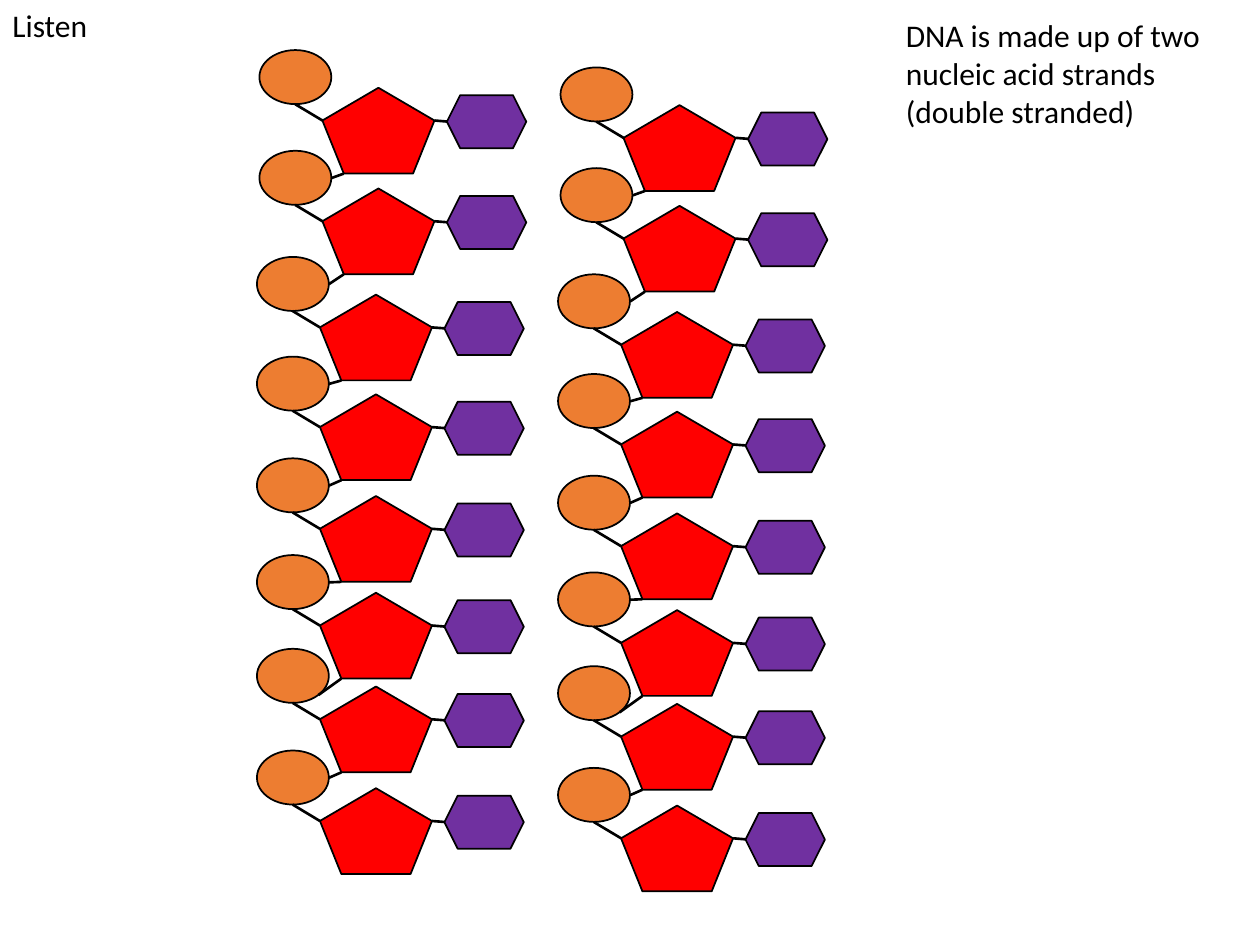
from lxml import etree
from pptx import Presentation
from pptx import util as u
from pptx.dml.color import RGBColor
from pptx.enum import shapes, text
from pptx.oxml.ns import qn

PHOSPHATE_SIZE = (1.45, 1.09)
SUGAR_SIZE = (2.26, 1.73)
BASE_SIZE = (1.6, 1.07)

# Places within a nucleotide, measured from the corner of its phosphate
SUGAR_AT = (1.27, 0.76)
BASE_AT = (3.78, 0.91)
SUGAR_FOOT = (1.7, 2.49)
PHOSPHATE_SIDE = (1.45, 0.55)
PHOSPHATE_LOWER_SIDE = (1.24, 0.93)
BONDS = [((0.72, 1.09), (1.27, 1.42)), ((3.53, 1.42), (3.78, 1.44))]

NUCLEOTIDES = [
    (5.23, 1.01), (5.23, 3.04), (5.18, 5.18), (5.18, 7.19),
    (5.18, 9.24), (5.18, 11.19), (5.18, 13.08), (5.18, 15.13),
]
LOW_LINK = 6  # the nucleotide whose link meets the phosphate lower down
STRAND_OFFSETS = [(0, 0), (6.07, 0.35)]


def colour(value):
    return RGBColor.from_string(value)


def add(point, offset):
    return point[0] + offset[0], point[1] + offset[1]


def write(frame, words, size=18, font="Calibri", ink="000000"):
    run = frame.paragraphs[0].add_run()
    run.text = words
    run.font.size = u.Pt(size)
    run.font.name = font
    run.font.color.rgb = colour(ink)


class Diagram:
    """Holds the style and the slide being drawn."""

    ink = "000000"
    phosphate = "ED7D31"
    sugar = "FF0000"
    base = "7030A0"

    def __init__(self, slide):
        self.slide = slide

    def shape(self, group, kind, at, size, fill):
        shape = group.shapes.add_shape(kind, *map(u.Cm, at + size))
        shape.shadow.inherit = False
        shape.fill.solid()
        shape.fill.fore_color.rgb = colour(fill)
        shape.line.color.rgb = colour(self.ink)
        shape.line.width = u.Pt(1)

    def bond(self, group, start, end):
        line = group.shapes.add_connector(
            shapes.MSO_CONNECTOR.STRAIGHT, *map(u.Cm, start + end))
        line.line.color.rgb = colour(self.ink)
        line.line.width = u.Pt(1.5)
        etree.SubElement(line._element.spPr, qn("a:effectLst"))

    def nucleotide(self, group, at):
        kinds = shapes.MSO_SHAPE
        self.shape(group, kinds.OVAL, at, PHOSPHATE_SIZE, self.phosphate)
        self.shape(group, kinds.REGULAR_PENTAGON, add(at, SUGAR_AT),
                   SUGAR_SIZE, self.sugar)
        self.shape(group, kinds.HEXAGON, add(at, BASE_AT),
                   BASE_SIZE, self.base)
        for start, end in BONDS:
            self.bond(group, add(at, start), add(at, end))

    def strand(self, offset):
        """Draw the nucleotides from the bottom up, then link neighbours."""
        group = self.slide.shapes.add_group_shape()
        places = [add(place, offset) for place in NUCLEOTIDES]
        for place in reversed(places):
            self.nucleotide(group, place)
        for index in range(len(places) - 1, 0, -1):
            side = PHOSPHATE_LOWER_SIDE if index == LOW_LINK else PHOSPHATE_SIDE
            self.bond(group, add(places[index], side),
                      add(places[index - 1], SUGAR_FOOT))

    def label(self, words, at, size):
        box = self.slide.shapes.add_textbox(*map(u.Cm, at + size))
        box.text_frame.word_wrap = True
        box.text_frame.auto_size = text.MSO_AUTO_SIZE.SHAPE_TO_FIT_TEXT
        write(box.text_frame, words, ink=self.ink)


def main():
    presentation = Presentation()
    presentation.slide_width = u.Cm(25.4)
    presentation.slide_height = u.Cm(19.05)
    slide = presentation.slides.add_slide(presentation.slide_layouts[6])
    diagram = Diagram(slide)
    for offset in STRAND_OFFSETS:
        diagram.strand(offset)
    diagram.label("DNA is made up of two nucleic acid strands (double stranded)",
                  (18.01, 0.2), (6.96, 2.57))
    diagram.label("Listen", (0, 0), (2.41, 1.02))
    presentation.save("out.pptx")


if __name__ == "__main__":
    main()
